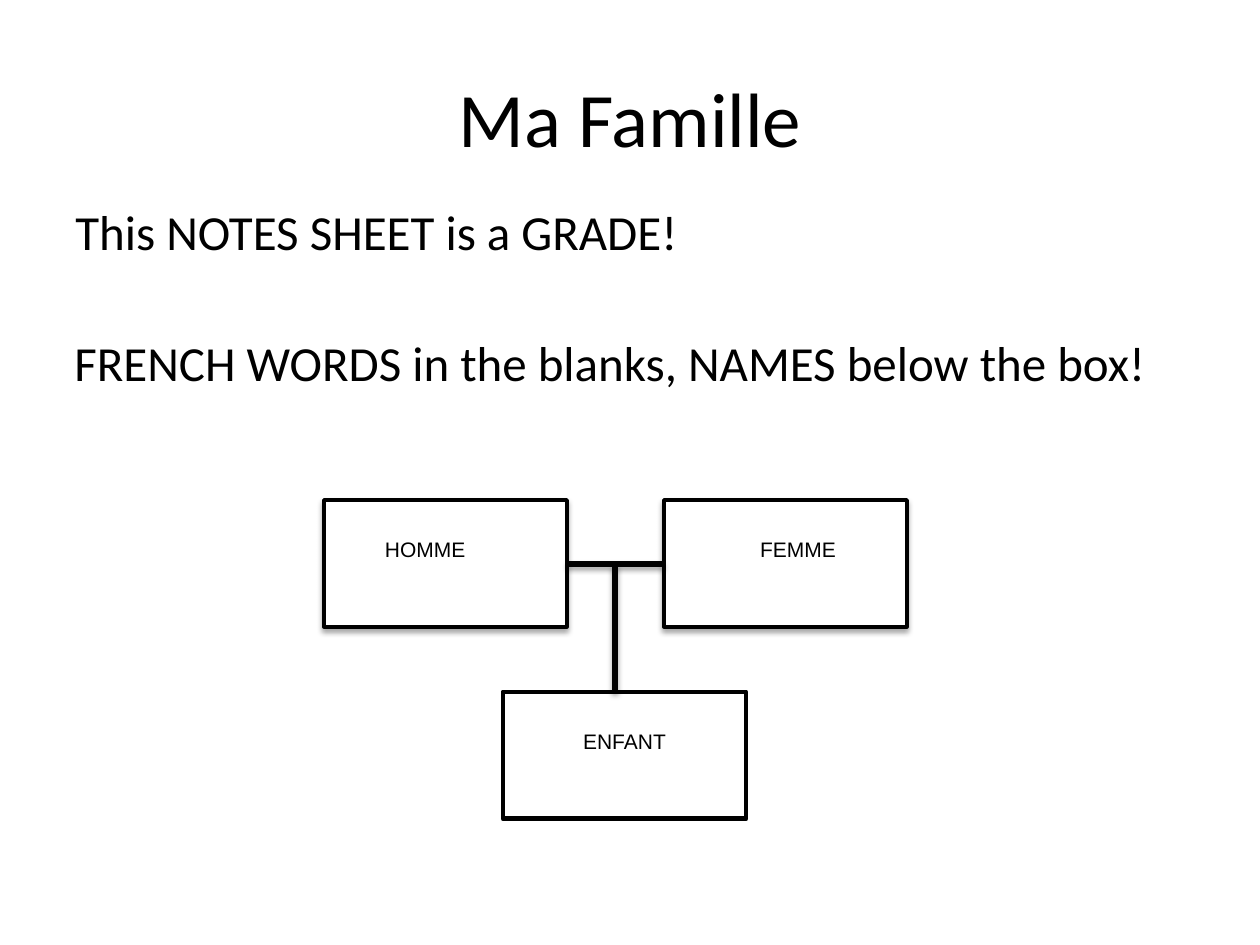
from lxml import etree
from pptx import Presentation, util as u
from pptx.dml.color import RGBColor
from pptx.enum import shapes, text
from pptx.oxml import parse_xml

BLACK = RGBColor(0, 0, 0)
WHITE = RGBColor(255, 255, 255)
PX = u.Inches(1) / 126
NS = "http://schemas.openxmlformats.org/drawingml/2006/main"
SHADE = (
    f'<a:effectLst xmlns:a="{NS}"><a:outerShdw blurRad="38100" dist="25400" '
    'dir="5400000" rotWithShape="0"><a:srgbClr val="000000">'
    '<a:alpha val="35000"/></a:srgbClr></a:outerShdw></a:effectLst>'
)


def px(*nums):
    return [round(n * PX) for n in nums]


def write(frame, words, size, font, align):
    para = frame.paragraphs[0]
    para.alignment = align
    run = para.add_run()
    run.text = words
    run.font.size = u.Pt(size)
    run.font.name = font
    run.font.color.rgb = BLACK


LEFT = text.PP_ALIGN.LEFT
MID = text.PP_ALIGN.CENTER

deck = Presentation()
deck.slide_width, deck.slide_height = px(1260, 945)
slide = deck.slides.add_slide(deck.slide_layouts[5])
items = slide.shapes

title = items.title
title.left, title.top, title.width, title.height = px(63, 38, 1134, 157)
title.text_frame.vertical_anchor = text.MSO_ANCHOR.MIDDLE
write(title.text_frame, "Ma Famille", 44, "Calibri", MID)

WIDE, HIGH = 243, 127
TOP, LOW = 500, 692
HOME, WIFE, CHILD = 324, 664, 503

for x in (HOME, WIFE):
    box = items.add_shape(shapes.MSO_SHAPE.RECTANGLE, *px(x, TOP, WIDE, HIGH))
    box.fill.solid()
    box.fill.fore_color.rgb = WHITE
    box.line.color.rgb = BLACK
    box.line.width = u.Pt(2)
    box._element.spPr.append(parse_xml(SHADE))

bar = TOP + HIGH // 2 + 1
stem = (HOME + WIDE + WIFE) // 2
for ends in ((HOME + WIDE, bar, WIFE, bar), (stem, bar, stem, LOW)):
    link = items.add_connector(shapes.MSO_CONNECTOR.STRAIGHT, *px(*ends))
    link.line.color.rgb = BLACK
    link.line.width = u.Pt(3.5)
    link._element.spPr.append(parse_xml(SHADE))

child = items.add_shape(shapes.MSO_SHAPE.RECTANGLE, *px(CHILD, LOW, WIDE, HIGH))
child.shadow.inherit = False
child.fill.background()
child.line.color.rgb = BLACK
child.line.width = u.Pt(2.75)

man = items.add_textbox(*px(372, TOP, 195, HIGH))
woman = items.add_textbox(*px(713, TOP, 170, HIGH))
for shape, words, align in (
    (man, "HOMME", LEFT),
    (woman, "FEMME", MID),
    (child, "ENFANT", MID),
):
    frame = shape.text_frame
    frame.word_wrap = True
    frame.vertical_anchor = text.MSO_ANCHOR.TOP
    frame.margin_left, frame.margin_right, frame.margin_top = px(13, 13, 37)
    write(frame, words, 12, "Arial", align)

for x, y, wide, words in (
    (63, 195, 716, "This NOTES SHEET is a GRADE!"),
    (62, 326, 1172, "FRENCH WORDS in the blanks, NAMES below the box!"),
):
    note = items.add_textbox(*px(x, y, wide, 72))
    note.text_frame.word_wrap = True
    note.text_frame.auto_size = text.MSO_AUTO_SIZE.SHAPE_TO_FIT_TEXT
    write(note.text_frame, words, 28, "Calibri", LEFT)

deck.save("out.pptx")
